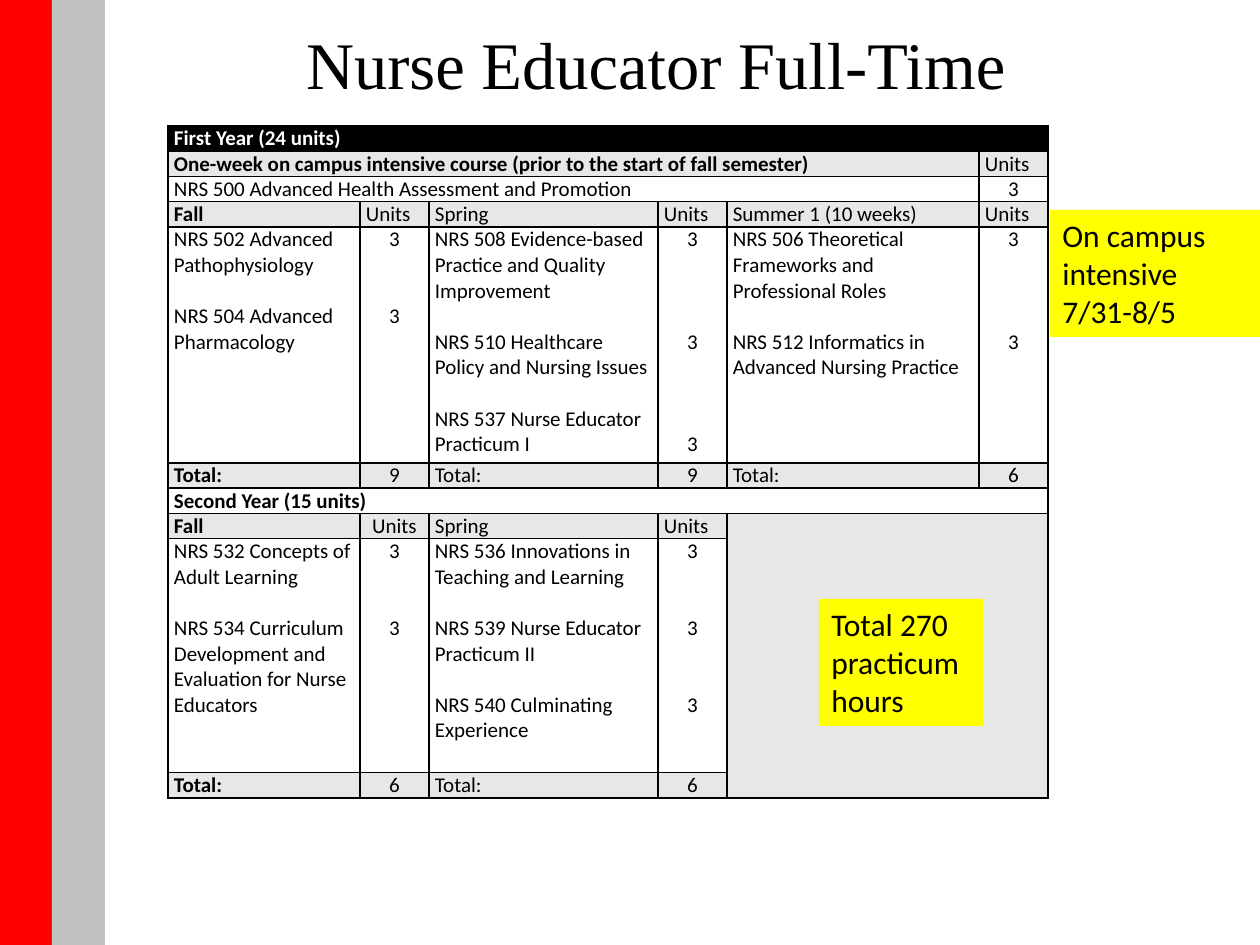
import lxml.etree
import pptx
import pptx.dml.color
import pptx.enum.shapes
import pptx.enum.text
import pptx.oxml.ns
import pptx.util

RED = pptx.dml.color.RGBColor(0xFF, 0x00, 0x00)
SILVER = pptx.dml.color.RGBColor(0xC0, 0xC0, 0xC0)
YELLOW = pptx.dml.color.RGBColor(0xFF, 0xFF, 0x00)
BLACK = pptx.dml.color.RGBColor(0x00, 0x00, 0x00)
WHITE = pptx.dml.color.RGBColor(0xFF, 0xFF, 0xFF)
SHADE = pptx.dml.color.RGBColor(0xE7, 0xE7, 0xE7)

LEFT = pptx.enum.text.PP_ALIGN.LEFT
CENTER = pptx.enum.text.PP_ALIGN.CENTER
MIDDLE = pptx.enum.text.MSO_ANCHOR.MIDDLE
TOP = pptx.enum.text.MSO_ANCHOR.TOP

EMU_PER_PX = 914400 / 126
CELL_LINE_PT = 14.65
LINE_ROW = 24
COLUMNS = [192, 69, 229, 69, 252, 69]
ROWS = [LINE_ROW] * 4 + [236] + [LINE_ROW] * 3 + [234, LINE_ROW]

FIRST_YEAR = [
    ("Fall", ["NRS 502 Advanced Pathophysiology", "NRS 504 Advanced Pharmacology"], 2, "9"),
    ("Spring", ["NRS 508 Evidence-based Practice and Quality Improvement",
                "NRS 510 Healthcare Policy and Nursing Issues",
                "NRS 537 Nurse Educator Practicum I"], 3, "9"),
    ("Summer 1 (10 weeks)", ["NRS 506 Theoretical Frameworks and Professional Roles",
                             "NRS 512 Informatics in Advanced Nursing Practice"], 3, "6"),
]
SECOND_YEAR = [
    ("Fall", ["NRS 532 Concepts of Adult Learning",
              "NRS 534 Curriculum Development and Evaluation for Nurse Educators"], 2, "6"),
    ("Spring", ["NRS 536 Innovations in Teaching and Learning",
                "NRS 539 Nurse Educator Practicum II",
                "NRS 540 Culminating Experience"], 2, "6"),
]


def px(length):
    return pptx.util.Emu(round(length * EMU_PER_PX))


def write(frame, *lines, size=12, font="Calibri", color=BLACK, bold=False, align=LEFT, gap=0):
    for index, line in enumerate(lines):
        paragraph = frame.add_paragraph() if index else frame.paragraphs[0]
        paragraph.alignment = align
        if index:
            paragraph.space_before = pptx.util.Pt(gap)
        run = paragraph.add_run()
        run.text = line
        run.font.size = pptx.util.Pt(size)
        run.font.name = font
        run.font.bold = bold
        run.font.color.rgb = color


class CurriculumSlide:
    """Holds the slide, its course grid and the methods that draw each element."""

    def __init__(self, presentation):
        self.slide = presentation.slides.add_slide(presentation.slide_layouts[6])
        self.grid = None

    def box(self, left, top, width, height, fill):
        box = self.slide.shapes.add_shape(
            pptx.enum.shapes.MSO_SHAPE.RECTANGLE, px(left), px(top), px(width), px(height))
        box.shadow.inherit = False
        box.fill.solid()
        box.fill.fore_color.rgb = fill
        box.line.fill.background()
        return box

    def note(self, left, top, width, height, text):
        frame = self.box(left, top, width, height, YELLOW).text_frame
        frame.word_wrap = True
        frame.vertical_anchor = TOP
        write(frame, text, size=18)

    def title(self, left, top, width, height, text):
        frame = self.slide.shapes.add_textbox(
            px(left), px(top), px(width), px(height)).text_frame
        frame.word_wrap = True
        frame.margin_left = frame.margin_right = frame.margin_top = frame.margin_bottom = 0
        write(frame, text, size=38, font="Times New Roman")

    def table(self, left, top):
        self.grid = self.slide.shapes.add_table(
            len(ROWS), len(COLUMNS), px(left), px(top),
            px(sum(COLUMNS)), px(sum(ROWS))).table
        for column, width in zip(self.grid.columns, COLUMNS):
            column.width = px(width)
        for row, height in zip(self.grid.rows, ROWS):
            row.height = px(height)
        for cell in self.grid.iter_cells():
            cell.margin_left = cell.margin_right = px(6)
            cell.margin_top = cell.margin_bottom = 0
            cell.fill.solid()
            cell.fill.fore_color.rgb = SHADE
            self.border(cell)
            lxml.etree.SubElement(
                cell.text_frame.paragraphs[0]._p, pptx.oxml.ns.qn("a:endParaRPr"), sz="1200")

    def border(self, cell):
        properties = cell._tc.get_or_add_tcPr()
        for index, side in enumerate(("a:lnL", "a:lnR", "a:lnT", "a:lnB")):
            line = lxml.etree.Element(pptx.oxml.ns.qn(side), w="12700")
            fill = lxml.etree.SubElement(line, pptx.oxml.ns.qn("a:solidFill"))
            lxml.etree.SubElement(fill, pptx.oxml.ns.qn("a:srgbClr"), val=str(BLACK))
            properties.insert(index, line)

    def cell(self, row, column, *lines, fill=SHADE, rows=1, columns=1, anchor=TOP, **style):
        cell = self.grid.cell(row, column)
        if rows * columns > 1:
            cell.merge(self.grid.cell(row + rows - 1, column + columns - 1))
        cell.fill.fore_color.rgb = fill
        cell.vertical_anchor = anchor
        write(cell.text_frame, *lines, **style)

    def terms(self, top, terms, first_units_align=LEFT, total_anchor=TOP):
        for index, (term, courses, blank_lines, total) in enumerate(terms):
            name, units = 2 * index, 2 * index + 1
            first = index == 0
            self.cell(top, name, term, bold=first)
            self.cell(top, units, "Units", align=first_units_align if first else LEFT)
            self.cell(top + 1, name, *courses, fill=WHITE, gap=CELL_LINE_PT)
            self.cell(top + 1, units, *["3"] * len(courses), fill=WHITE, align=CENTER,
                      gap=blank_lines * CELL_LINE_PT)
            self.cell(top + 2, name, "Total:", bold=first)
            self.cell(top + 2, units, total, align=CENTER,
                      anchor=total_anchor if index < 2 else TOP)


def main():
    presentation = pptx.Presentation()
    presentation.slide_width, presentation.slide_height = px(1260), px(945)
    page = CurriculumSlide(presentation)

    page.box(0, 0, 52, 945, RED)
    page.box(52, 0, 53, 945, SILVER)
    page.title(306, 23, 762, 81, "Nurse Educator Full-Time")

    page.table(168, 126)
    page.cell(0, 0, "First Year (24 units)", fill=BLACK, columns=6, color=WHITE, bold=True)
    page.cell(1, 0, "One-week on campus intensive course (prior to the start of fall semester)",
              columns=5, bold=True)
    page.cell(1, 5, "Units")
    page.cell(2, 0, "NRS 500 Advanced Health Assessment and Promotion", fill=WHITE, columns=5)
    page.cell(2, 5, "3", fill=WHITE, align=CENTER)
    page.terms(3, FIRST_YEAR, total_anchor=MIDDLE)
    page.cell(6, 0, "Second Year (15 units)", fill=WHITE, columns=6, bold=True)
    page.terms(7, SECOND_YEAR, first_units_align=CENTER)
    page.cell(7, 4, rows=3, columns=2)

    page.note(1050, 210, 211, 127, "On campus intensive 7/31-8/5")
    page.note(819, 599, 164, 127, "Total 270 practicum hours")
    presentation.save("out.pptx")


if __name__ == "__main__":
    main()
